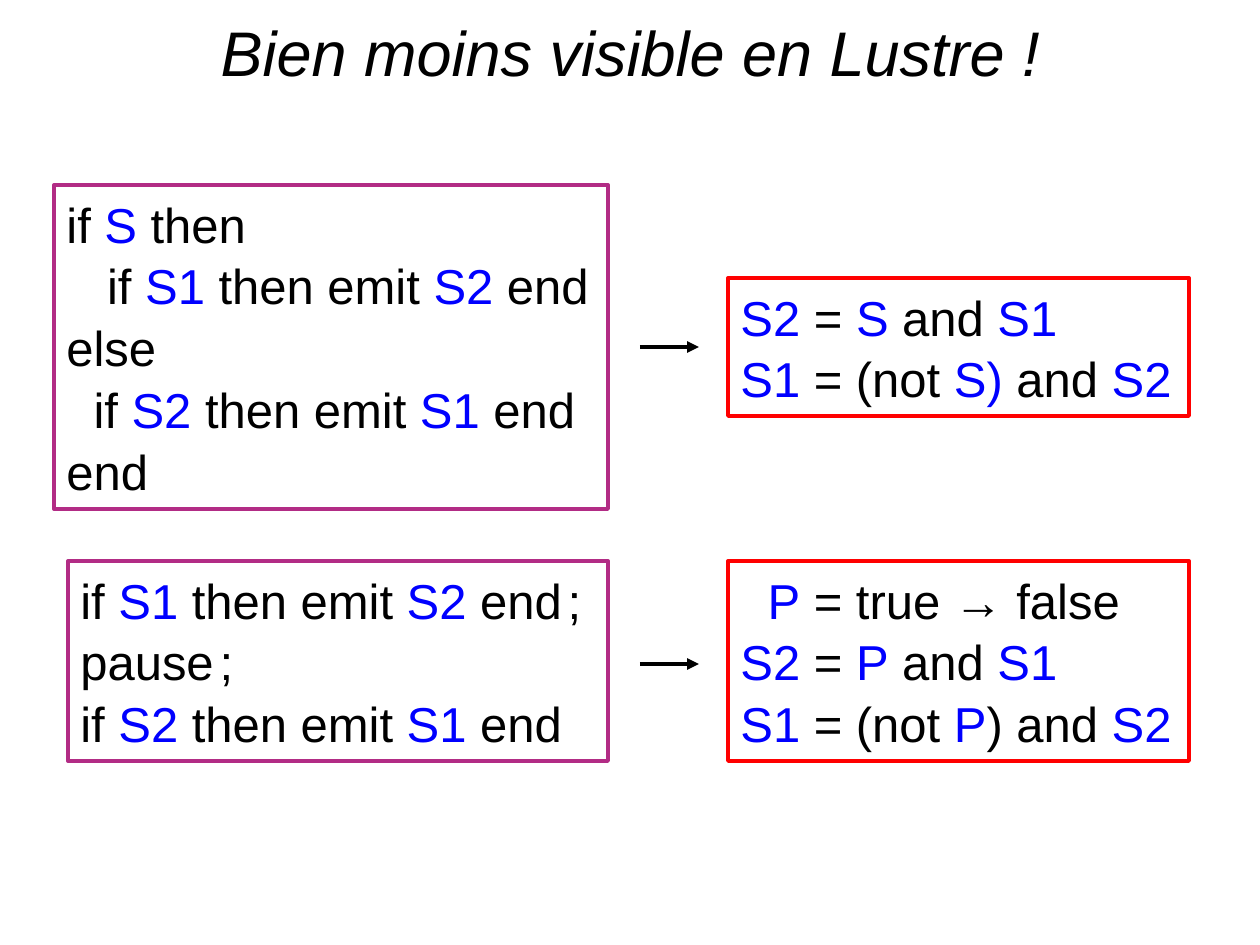
from typing import NamedTuple

from lxml import etree
from pptx import Presentation
from pptx import util as u
from pptx.dml.color import RGBColor
from pptx.enum import shapes, text
from pptx.oxml.ns import qn

PX = 914400 / 126
FONT = "Arial"
COLORS = {"ink": "000000", "signal": "0000FF", "source": "B22C85", "equation": "FF0000"}


class Run(NamedTuple):
    text: str
    color: str = "ink"
    size: int = 28
    italic: bool = False


class Box(NamedTuple):
    x: int
    y: int
    w: int
    h: int
    color: str
    lines: list[list[Run]]


class Arrow(NamedTuple):
    x1: int
    x2: int
    y: int


def px(n: int) -> u.Emu:
    return u.Emu(round(n * PX))


def rgb(name: str) -> RGBColor:
    return RGBColor.from_string(COLORS[name])


def sig(name: str) -> Run:
    return Run(name, "signal")


def emit(test: str, target: str, indent: str = "") -> list[Run]:
    return [Run(indent + "if "), sig(test + " "), Run("then emit "), sig(target), Run(" end")]


def both(out: str, left: str, right: str) -> list[Run]:
    return [sig(out), Run(" = "), sig(left), Run(" and "), sig(right)]


SEMICOLON = [Run(" ", size=12), Run(";")]

BOXES = [
    Box(54, 185, 554, 324, "source", [
        [Run("if "), sig("S "), Run("then")],
        emit("S1", "S2", "   "),
        [Run("else")],
        emit("S2", "S1", "  "),
        [Run("end")],
    ]),
    Box(68, 561, 540, 200, "source", [
        emit("S1", "S2") + SEMICOLON,
        [Run("pause")] + SEMICOLON,
        emit("S2", "S1"),
    ]),
    Box(728, 278, 461, 138, "equation", [
        both("S2", "S", "S1"),
        [sig("S1"), Run(" = (not "), sig("S)"), Run(" and "), sig("S2")],
    ]),
    Box(728, 561, 461, 200, "equation", [
        [Run("  "), sig("P"), Run(" = true → false")],
        both("S2", "P", "S1"),
        [sig("S1"), Run(" = (not "), sig("P"), Run(") and "), sig("S2")],
    ]),
]
ARROWS = [Arrow(640, 699, 347), Arrow(640, 699, 664)]


def add_runs(p, runs: list[Run]) -> None:
    for run in runs:
        r = p.add_run()
        r.text = run.text
        r.font.name = FONT
        r.font.size = u.Pt(run.size)
        r.font.italic = run.italic
        r.font.color.rgb = rgb(run.color)


def draw_title(s, title: str) -> None:
    tf = s.shapes.add_textbox(px(32), px(6), px(1197), px(90)).text_frame
    tf.word_wrap = True
    tf.vertical_anchor = text.MSO_ANCHOR.MIDDLE
    p = tf.paragraphs[0]
    p.alignment = text.PP_ALIGN.CENTER
    add_runs(p, [Run(title, size=36, italic=True)])


def draw_box(s, box: Box) -> None:
    sp = s.shapes.add_shape(
        shapes.MSO_SHAPE.RECTANGLE, px(box.x), px(box.y), px(box.w), px(box.h))
    sp.shadow.inherit = False
    sp.fill.background()
    sp.line.color.rgb = rgb(box.color)
    sp.line.width = u.Pt(2.25)
    tf = sp.text_frame
    tf.word_wrap = False
    tf.auto_size = text.MSO_AUTO_SIZE.SHAPE_TO_FIT_TEXT
    tf.vertical_anchor = text.MSO_ANCHOR.TOP
    for i, runs in enumerate(box.lines):
        p = tf.add_paragraph() if i else tf.paragraphs[0]
        p.alignment = text.PP_ALIGN.LEFT
        p.line_spacing = 1.05
        add_runs(p, runs)


def draw_arrow(s, arrow: Arrow) -> None:
    c = s.shapes.add_connector(
        shapes.MSO_CONNECTOR.STRAIGHT, px(arrow.x1), px(arrow.y), px(arrow.x2), px(arrow.y))
    c.line.color.rgb = rgb("ink")
    c.line.width = u.Pt(2.25)
    sp_pr = c.line._get_or_add_ln().getparent()
    etree.SubElement(sp_pr.find(qn("a:ln")), qn("a:tailEnd"), type="triangle")
    etree.SubElement(sp_pr, qn("a:effectLst"))


def main() -> None:
    prs = Presentation()
    prs.slide_width, prs.slide_height = u.Inches(10), u.Inches(7.5)
    s = prs.slides.add_slide(prs.slide_layouts[6])
    draw_title(s, "Bien moins visible en Lustre !")
    for box in BOXES:
        draw_box(s, box)
    for arrow in ARROWS:
        draw_arrow(s, arrow)
    prs.save("out.pptx")


if __name__ == "__main__":
    main()
